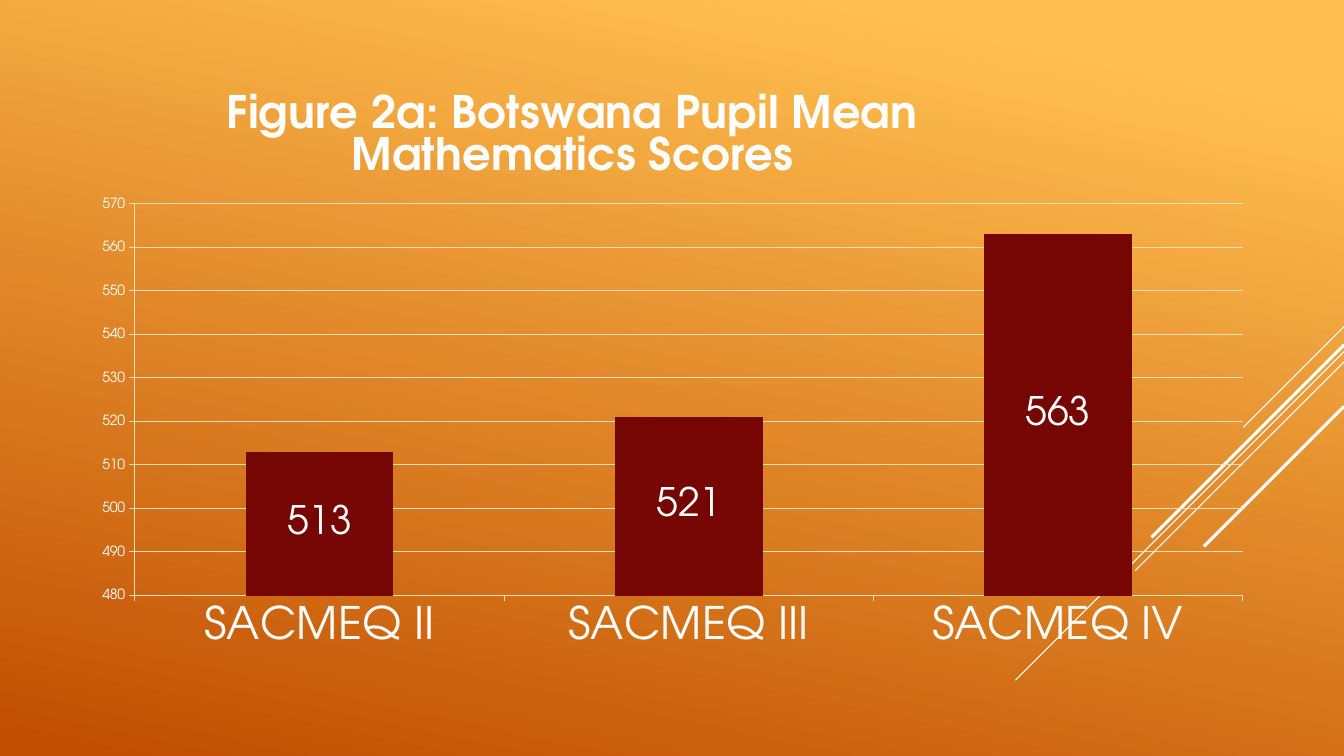
from dataclasses import dataclass

from pptx import Presentation
from pptx.chart.data import CategoryChartData
from pptx.dml.color import RGBColor as RGB
from pptx.enum.chart import XL_CHART_TYPE as ChartType
from pptx.enum.chart import XL_LABEL_POSITION as LabelPosition
from pptx.enum.chart import XL_TICK_MARK as TickMark
from pptx.enum.shapes import MSO_CONNECTOR as Connector
from pptx.enum.text import PP_ALIGN as Align
from pptx.oxml.ns import qn
from pptx.oxml.xmlchemy import OxmlElement
from pptx.util import Cm, Pt

TITLE = "Figure 2a: Botswana Pupil Mean Mathematics Scores"
SERIES_NAME = "Series 1"
SCORES = {"SACMEQ II": 513, "SACMEQ III": 521, "SACMEQ IV": 563}
SCORE_RANGE = (480, 570, 10)

SLIDE_WIDTH, SLIDE_HEIGHT = 33.87, 19.05
CHART_BOX = (1.9, 1.9, 30.02, 14.73)
TITLE_LAYOUT = {"x": 0.12, "y": 0.01}
PLOT_LAYOUT = {"x": 0.05, "y": 0.22, "w": 0.93, "h": 0.67}

# (top at the right edge, reach to the left and down, weight)
DIAGONALS = [
    (8.23, 2.54, 0.75),
    (8.86, 8.28, 0.75),
    (9.12, 5.26, 0.75),
    (8.69, 4.85, 2.25),
    (10.24, 3.53, 2.25),
]


@dataclass(frozen=True)
class Theme:
    font: str = "TeX Gyre Adventor"
    text: RGB = RGB(0xFF, 0xFF, 0xFF)
    grid: RGB = RGB(0xF8, 0xDD, 0xB8)
    bar: RGB = RGB(0x76, 0x06, 0x03)
    glow: RGB = RGB(0xFF, 0xBF, 0x50)
    ember: RGB = RGB(0xC0, 0x4D, 0x00)
    title_size: int = 32
    category_size: int = 32
    label_size: int = 28
    axis_size: int = 10


THEME = Theme()


def style_font(font, size, bold=False):
    font.name = THEME.font
    font.size = Pt(size)
    font.bold = bold
    font.color.rgb = THEME.text


def style_line(line, color, weight=0.75):
    line.color.rgb = color
    line.width = Pt(weight)


def paint_background(slide):
    fill = slide.background.fill
    fill.gradient()
    fill.gradient_angle = 258
    stops = ((0.1, THEME.glow), (1, THEME.ember))
    for stop, (position, color) in zip(fill.gradient_stops, stops):
        stop.position = position
        stop.color.rgb = color


def draw_diagonals(slide):
    for top, reach, weight in DIAGONALS:
        connector = slide.shapes.add_connector(
            Connector.STRAIGHT, Cm(SLIDE_WIDTH), Cm(top),
            Cm(SLIDE_WIDTH - reach), Cm(top + reach))
        style_line(connector.line, THEME.text, weight)
        connector._element.spPr.append(OxmlElement("a:effectLst"))


def place(element, index, positions, inner=False):
    for old in element.findall(qn("c:layout")):
        element.remove(old)
    layout = OxmlElement("c:layout")
    manual = OxmlElement("c:manualLayout")
    layout.append(manual)
    settings = [("layoutTarget", "inner")] if inner else []
    settings += [("xMode", "edge"), ("yMode", "edge"), *positions.items()]
    for name, value in settings:
        setting = OxmlElement(f"c:{name}")
        setting.set("val", str(value))
        manual.append(setting)
    element.insert(index, layout)


def style_axes(chart):
    sizes = ((chart.category_axis, THEME.category_size),
             (chart.value_axis, THEME.axis_size))
    for axis, size in sizes:
        axis.major_tick_mark = TickMark.OUTSIDE
        axis.minor_tick_mark = TickMark.NONE
        style_line(axis.format.line, THEME.grid)
        style_font(axis.tick_labels.font, size)
    scores = chart.value_axis
    scores.minimum_scale, scores.maximum_scale, scores.major_unit = SCORE_RANGE
    scores.has_major_gridlines = True
    style_line(scores.major_gridlines.format.line, THEME.grid)


def style_bars(plot):
    plot.gap_width = 150
    plot.vary_by_categories = False
    fill = plot.series[0].format.fill
    fill.solid()
    fill.fore_color.rgb = THEME.bar
    labels = plot.series[0].data_labels
    labels.show_value = True
    labels.position = LabelPosition.CENTER
    style_font(labels.font, THEME.label_size)


def add_score_chart(slide):
    data = CategoryChartData()
    data.categories = list(SCORES)
    data.add_series(SERIES_NAME, list(SCORES.values()))
    chart = slide.shapes.add_chart(
        ChartType.COLUMN_CLUSTERED, *map(Cm, CHART_BOX), data).chart
    style_font(chart.font, THEME.axis_size)
    chart.has_legend = False
    chart.has_title = True
    title = chart.chart_title.text_frame
    title.text = TITLE
    title.paragraphs[0].alignment = Align.CENTER
    style_font(title.paragraphs[0].font, THEME.title_size, bold=True)
    style_axes(chart)
    style_bars(chart.plots[0])
    root = chart._chartSpace.chart
    place(root.find(qn("c:title")), 1, TITLE_LAYOUT)
    place(root.plotArea, 0, PLOT_LAYOUT, inner=True)


def main():
    presentation = Presentation()
    presentation.slide_width = Cm(SLIDE_WIDTH)
    presentation.slide_height = Cm(SLIDE_HEIGHT)
    slide = presentation.slides.add_slide(presentation.slide_layouts[6])
    paint_background(slide)
    draw_diagonals(slide)
    add_score_chart(slide)
    presentation.save("out.pptx")


if __name__ == "__main__":
    main()
